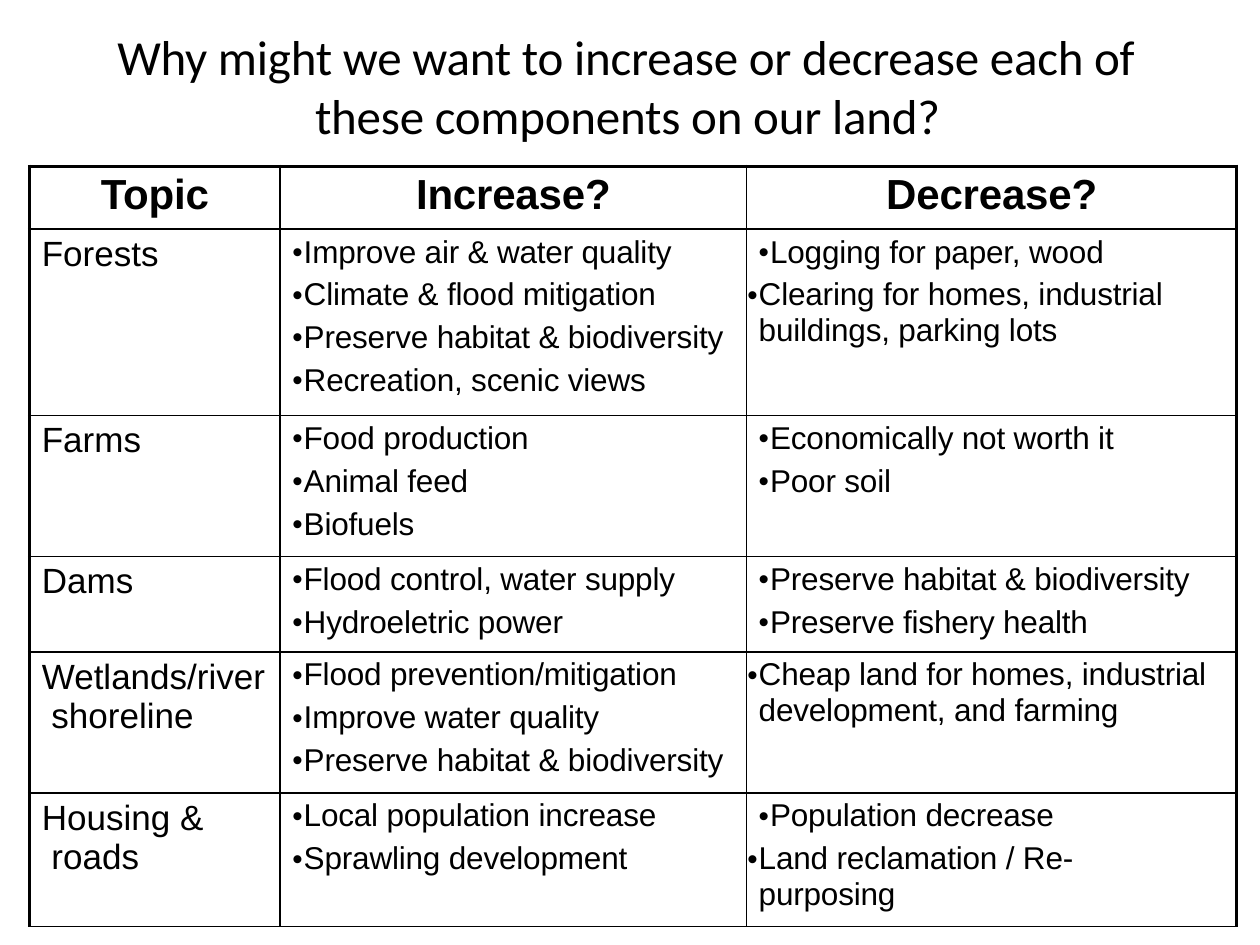
from lxml import etree
from pptx import Presentation
from pptx.dml.color import RGBColor
from pptx.enum import text
from pptx.oxml import ns
from pptx.util import Pt

BLACK = RGBColor(0, 0, 0)
THICK, THIN = 2.25, 1
BULLET_HANG = 6.5
COLUMN_WIDTHS = [143.2, 266.5, 280.2]
ROW_HEIGHTS = [36, 106.5, 80.5, 54.7, 80.6, 76.3]
HEADINGS = ["Topic", "Increase?", "Decrease?"]
# Reasons that run over one line are set further left than the others.
LONG_REASONS = {
    "Clearing for homes, industrial buildings, parking lots",
    "Cheap land for homes, industrial development, and farming",
    "Land reclamation / Re-\vpurposing",
}
TOPICS = [
    ("Forests",
     ["Improve air & water quality", "Climate & flood mitigation",
      "Preserve habitat & biodiversity", "Recreation, scenic views"],
     ["Logging for paper, wood",
      "Clearing for homes, industrial buildings, parking lots"]),
    ("Farms",
     ["Food production", "Animal feed", "Biofuels"],
     ["Economically not worth it", "Poor soil"]),
    ("Dams",
     ["Flood control, water supply", "Hydroeletric power"],
     ["Preserve habitat & biodiversity", "Preserve fishery health"]),
    ("Wetlands/river shoreline",
     ["Flood prevention/mitigation", "Improve water quality",
      "Preserve habitat & biodiversity"],
     ["Cheap land for homes, industrial development, and farming"]),
    ("Housing & roads",
     ["Local population increase", "Sprawling development"],
     ["Population decrease", "Land reclamation / Re-\vpurposing"]),
]


def add_child(parent, tag, **attributes):
    return etree.SubElement(parent, ns.qn(tag), attributes)


def write(paragraph, words, size, font="Arial", bold=False, align=None,
          before=3, left=0, first=0, tracking=0, bullet=False):
    """Fill a paragraph; left and first are its margin and first-line indent."""
    paragraph.text = words
    paragraph.alignment = align
    paragraph.space_before = Pt(before)
    for run in paragraph.runs:
        run.font.size, run.font.name, run.font.bold = Pt(size), font, bold
        run.font.color.rgb = BLACK
        run.font._element.set("spc", str(round(tracking * 100)))
    properties = paragraph._p.get_or_add_pPr()
    properties.set("marL", str(Pt(left)))
    properties.set("indent", str(Pt(first)))
    if bullet:
        add_child(properties, "a:buSzPct", val="94000")
        add_child(properties, "a:buFont", typeface="Arial")
        add_child(properties, "a:buChar", char="•")


def set_borders(cell, **widths):
    """Draw the borders L, R, T and B with the given widths."""
    properties = cell._tc.get_or_add_tcPr()
    for position, (side, width) in enumerate(widths.items()):
        line = etree.Element(ns.qn(f"a:ln{side}"), w=str(Pt(width)))
        fill = add_child(line, "a:solidFill")
        add_child(fill, "a:srgbClr", val=str(BLACK))
        properties.insert(position, line)


def write_reasons(cell, reasons):
    frame = cell.text_frame
    for number, reason in enumerate(reasons):
        paragraph = frame.add_paragraph() if number else frame.paragraphs[0]
        write(paragraph, reason, 18, before=4.3 if number else 3.1,
              left=7 if reason in LONG_REASONS else 13.5,
              first=-BULLET_HANG, tracking=-0.1, bullet=True)


def add_title(slide):
    frame = slide.shapes.add_textbox(Pt(54), Pt(14.4), Pt(613), Pt(69)).text_frame
    frame.word_wrap = True
    frame.margin_left = frame.margin_right = frame.margin_bottom = 0
    frame.margin_top = Pt(0.9)
    write(frame.paragraphs[0],
          "Why might we want to increase or decrease each of "
          "these components on our land?",
          28, font="Calibri", before=0.9, left=126, first=-113, tracking=-0.1)


def add_grid(slide):
    """Add the table with its columns, rows and borders, without text."""
    table = slide.shapes.add_table(
        len(ROW_HEIGHTS), len(COLUMN_WIDTHS), Pt(16.9), Pt(95),
        Pt(sum(COLUMN_WIDTHS)), Pt(sum(ROW_HEIGHTS))).table
    table.first_row = table.horz_banding = False
    for column, width in zip(table.columns, COLUMN_WIDTHS):
        column.width = Pt(width)
    last = len(COLUMN_WIDTHS) - 1
    for r, (row, height) in enumerate(zip(table.rows, ROW_HEIGHTS)):
        row.height = Pt(height)
        for c, cell in enumerate(row.cells):
            cell.margin_left = cell.margin_right = cell.margin_bottom = 0
            cell.margin_top = Pt(3)
            cell.fill.background()
            set_borders(cell, L=THIN if c else THICK,
                        R=THICK if c == last else THIN,
                        T=THIN if r else THICK, B=THIN)
    return table


def fill_table(table):
    for column, heading in enumerate(HEADINGS):
        write(table.cell(0, column).text_frame.paragraphs[0], heading, 24,
              bold=True, align=text.PP_ALIGN.CENTER, tracking=-0.1)
    for row, (topic, increase, decrease) in enumerate(TOPICS, start=1):
        write(table.cell(row, 0).text_frame.paragraphs[0], topic, 20,
              left=12.5, first=-5.5)
        write_reasons(table.cell(row, 1), increase)
        write_reasons(table.cell(row, 2), decrease)


def main():
    deck = Presentation()
    deck.slide_width, deck.slide_height = Pt(720), Pt(540)
    slide = deck.slides.add_slide(deck.slide_layouts[6])
    add_title(slide)
    fill_table(add_grid(slide))
    deck.save("out.pptx")


if __name__ == "__main__":
    main()
